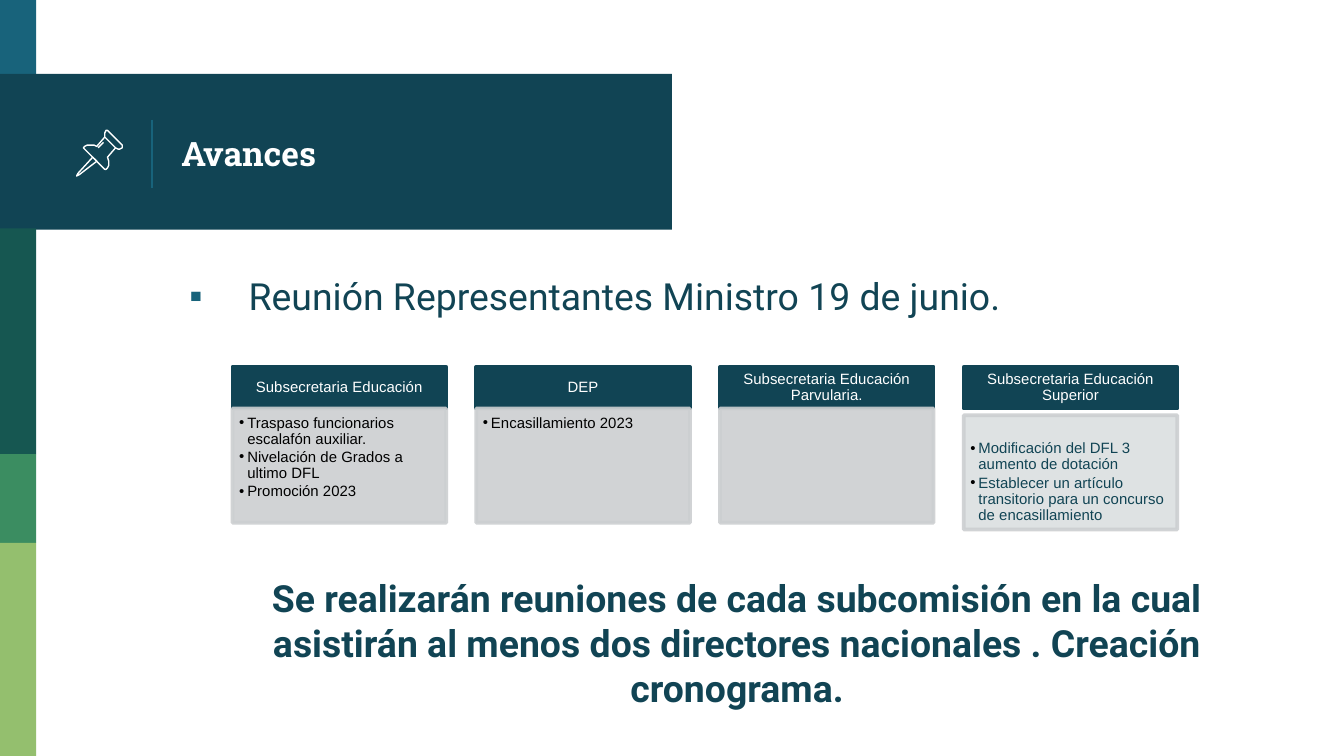
import pptx
import pptx.dml.color
import pptx.enum.shapes
import pptx.enum.text
import pptx.oxml
import pptx.oxml.ns
import pptx.util
from dataclasses import dataclass
from typing import NamedTuple

Inches, Pt = pptx.util.Inches, pptx.util.Pt
Anchor, Align = pptx.enum.text.MSO_ANCHOR, pptx.enum.text.PP_ALIGN
NS = pptx.oxml.ns.nsdecls("a")


@dataclass(frozen=True)
class Theme:
    navy: str = "114454"
    blue: str = "18637B"
    pine: str = "165751"
    green: str = "3B8D61"
    lime: str = "94BF6E"
    gray: str = "CCCFD1"
    pale: str = "DEE2E3"
    white: str = "FFFFFF"
    black: str = "000000"
    title_font: str = "Roboto Slab"
    body_font: str = "Roboto"
    card_font: str = "Arial"
    title_size: int = 18
    body_size: int = 20
    card_size: int = 8


class Band(NamedTuple):
    top: float
    width: float
    height: float
    color: str


class Outline(NamedTuple):
    points: list  # hundredths of an inch
    closed: bool


@dataclass
class Card:
    heading: str
    items: list
    top: float = 3.04
    fill: str = Theme.gray
    fill_alpha: int = 90
    text_color: str = Theme.black
    inset_top: float = 0.05


T = Theme()
BANDS = [
    Band(0, 0.27, 0.58, T.blue),
    Band(0.55, 5, 1.16, T.navy),
    Band(1.7, 0.27, 1.68, T.pine),
    Band(3.38, 0.27, 0.66, T.green),
    Band(4.04, 0.27, 1.59, T.lime),
]
PIN = [
    Outline([(69, 117), (58, 129), (57, 131), (59, 130), (72, 120)], True),
    Outline([(78, 102), (86, 110), (88, 111), (89, 111), (91, 110), (91, 108),
             (80, 97), (79, 97), (78, 99)], True),
    Outline([(78, 102), (72, 109), (70, 108), (65, 108), (63, 109), (62, 110),
             (63, 111), (78, 126), (79, 126), (80, 125), (81, 123), (81, 120),
             (80, 117), (86, 110)], False),
    Outline([(73, 110), (77, 106)], False),
]
CARDS = [
    Card("Subsecretaria Educación",
         ["Traspaso funcionarios escalafón auxiliar.",
          "Nivelación de Grados a ultimo DFL", "Promoción 2023"]),
    Card("DEP", ["Encasillamiento 2023"]),
    Card("Subsecretaria Educación Parvularia.", []),
    Card("Subsecretaria Educación Superior",
         ["Modificación del DFL 3 aumento de dotación",
          "Establecer un artículo transitorio para un concurso de encasillamiento"],
         top=3.09, fill=T.pale, fill_alpha=100, text_color=T.navy, inset_top=0.19),
]
CARD_LEFT, CARD_RIGHT, CARD_WIDTH = 1.73, 8.76, 1.59
CARD_STEP = (CARD_RIGHT - CARD_LEFT - CARD_WIDTH) / (len(CARDS) - 1)


def rgb(color: str) -> pptx.dml.color.RGBColor:
    return pptx.dml.color.RGBColor.from_string(color)


def set_alpha(parent, alpha: int) -> None:
    for clr in parent.iter(pptx.oxml.ns.qn("a:srgbClr")):
        clr.append(pptx.oxml.parse_xml(f'<a:alpha {NS} val="{alpha * 1000}"/>'))


def add_box(s, left: float, top: float, width: float, height: float, fill: str,
            line: str | None = None, fill_alpha: int = 100, line_alpha: int = 100):
    sp = s.shapes.add_shape(pptx.enum.shapes.MSO_SHAPE.RECTANGLE, Inches(left),
                            Inches(top), Inches(width), Inches(height))
    sp.shadow.inherit = False
    sp.fill.solid()
    sp.fill.fore_color.rgb = rgb(fill)
    if fill_alpha < 100:
        set_alpha(sp.element.spPr, fill_alpha)
    if line:
        sp.line.color.rgb = rgb(line)
        sp.line.width = Pt(2)
        if line_alpha < 100:
            set_alpha(sp.element.spPr.find(pptx.oxml.ns.qn("a:ln")), line_alpha)
    else:
        sp.line.fill.background()
    return sp


def set_text(sp, *texts: str, font: str, size: float, color: str, bold=False,
             align=Align.LEFT, anchor=Anchor.TOP, insets=(0.1, 0.1, 0.1, 0.1),
             margin=0.0, indent=0.0, bullet=None, bullet_color=T.black,
             before=0.0, after=0.0, spacing=1.0) -> None:
    tf = sp.text_frame
    tf.word_wrap = True
    tf.auto_size = pptx.enum.text.MSO_AUTO_SIZE.NONE
    tf.vertical_anchor = anchor
    tf.margin_left, tf.margin_top, tf.margin_right, tf.margin_bottom = map(Inches, insets)
    for i, text in enumerate(texts):
        p = tf.add_paragraph() if i else tf.paragraphs[0]
        p.alignment, p.line_spacing = align, spacing
        p.space_before, p.space_after = Pt(before), Pt(after)
        pPr = p._p.get_or_add_pPr()
        pPr.set("marL", str(Inches(margin)))
        pPr.set("indent", str(Inches(indent)))
        if bullet:
            for xml in (f'<a:buClr {NS}><a:srgbClr val="{bullet_color}"/></a:buClr>',
                        f'<a:buFont {NS} typeface="Arial"/>',
                        f'<a:buChar {NS} char="{bullet}"/>'):
                pPr.append(pptx.oxml.parse_xml(xml))
        r = p.add_run()
        r.text = text
        r.font.name, r.font.size, r.font.bold = font, Pt(size), bold
        r.font.color.rgb = rgb(color)


def place(sp, left: float, top: float, width: float, height: float) -> None:
    sp.left, sp.top, sp.width, sp.height = map(Inches, (left, top, width, height))


def add_outline(s, outline: Outline) -> None:
    builder = s.shapes.build_freeform(*outline.points[0], scale=Inches(0.01))
    builder.add_line_segments(outline.points[1:], close=outline.closed)
    sp = builder.convert_to_shape()
    sp.shadow.inherit = False
    sp.fill.background()
    sp.line.color.rgb = rgb(T.white)
    sp.line.width = Pt(0.75)


def add_card(s, card: Card, left: float) -> None:
    head = add_box(s, left, 2.73, CARD_WIDTH, 0.31, T.navy, T.navy)
    set_text(head, card.heading, font=T.card_font, size=T.card_size, color=T.white,
             align=Align.CENTER, anchor=Anchor.MIDDLE,
             insets=(0.06, 0.04, 0.06, 0.04), spacing=0.9)
    body = add_box(s, left, card.top, CARD_WIDTH, 0.85, card.fill, T.gray,
                   card.fill_alpha, line_alpha=90)
    if card.items:
        set_text(body, *card.items, font=T.card_font, size=T.card_size,
                 color=card.text_color, insets=(0.05, card.inset_top, 0.06, 0.07),
                 margin=0.06, indent=-0.06, bullet="•", after=1.2, spacing=0.9)


def main() -> None:
    prs = pptx.Presentation()
    prs.slide_width = Inches(10)
    prs.slide_height = prs.slide_width * 9 // 16
    s = prs.slides.add_slide(prs.slide_layouts[1])

    # Side bands, title band and divider
    for band in BANDS:
        add_box(s, 0, band.top, band.width, band.height, band.color)
    divider = s.shapes.add_connector(pptx.enum.shapes.MSO_CONNECTOR.STRAIGHT,
                                     Inches(1.13), Inches(0.89), Inches(1.13), Inches(1.4))
    divider.line.color.rgb = rgb(T.blue)
    divider.line.width = Pt(0.75)
    divider.element.spPr.append(pptx.oxml.parse_xml(f"<a:effectLst {NS}/>"))

    # Title and body, brought in front of the bands
    title, body = s.shapes.title, s.placeholders[1]
    for sp in (title, body):
        s.shapes.element.append(sp.element)
    place(title, 1.25, 0.58, 3.51, 1.12)
    set_text(title, "Avances", font=T.title_font, size=T.title_size, color=T.white,
             bold=True, anchor=Anchor.MIDDLE)
    place(body, 1.25, 1.93, 8.25, 0.65)
    set_text(body, "Reunión Representantes Ministro 19 de junio.", font=T.body_font,
             size=T.body_size, color=T.navy, margin=0.5, indent=-0.44, bullet="▪",
             bullet_color=T.blue, before=6)

    # Pushpin icon
    for outline in PIN:
        add_outline(s, outline)

    # Cards
    for i, card in enumerate(CARDS):
        add_card(s, card, CARD_LEFT + i * CARD_STEP)

    # Closing statement
    closing = s.shapes.add_textbox(Inches(1.33), Inches(4.18), Inches(8.25), Inches(1.44))
    set_text(closing, "Se realizarán reuniones de cada subcomisión en la cual asistirán "
             "al menos dos directores nacionales . Creación cronograma.",
             font=T.body_font, size=T.body_size, color=T.navy, bold=True,
             align=Align.CENTER, margin=0.06, before=6)
    prs.save("out.pptx")


if __name__ == "__main__":
    main()
